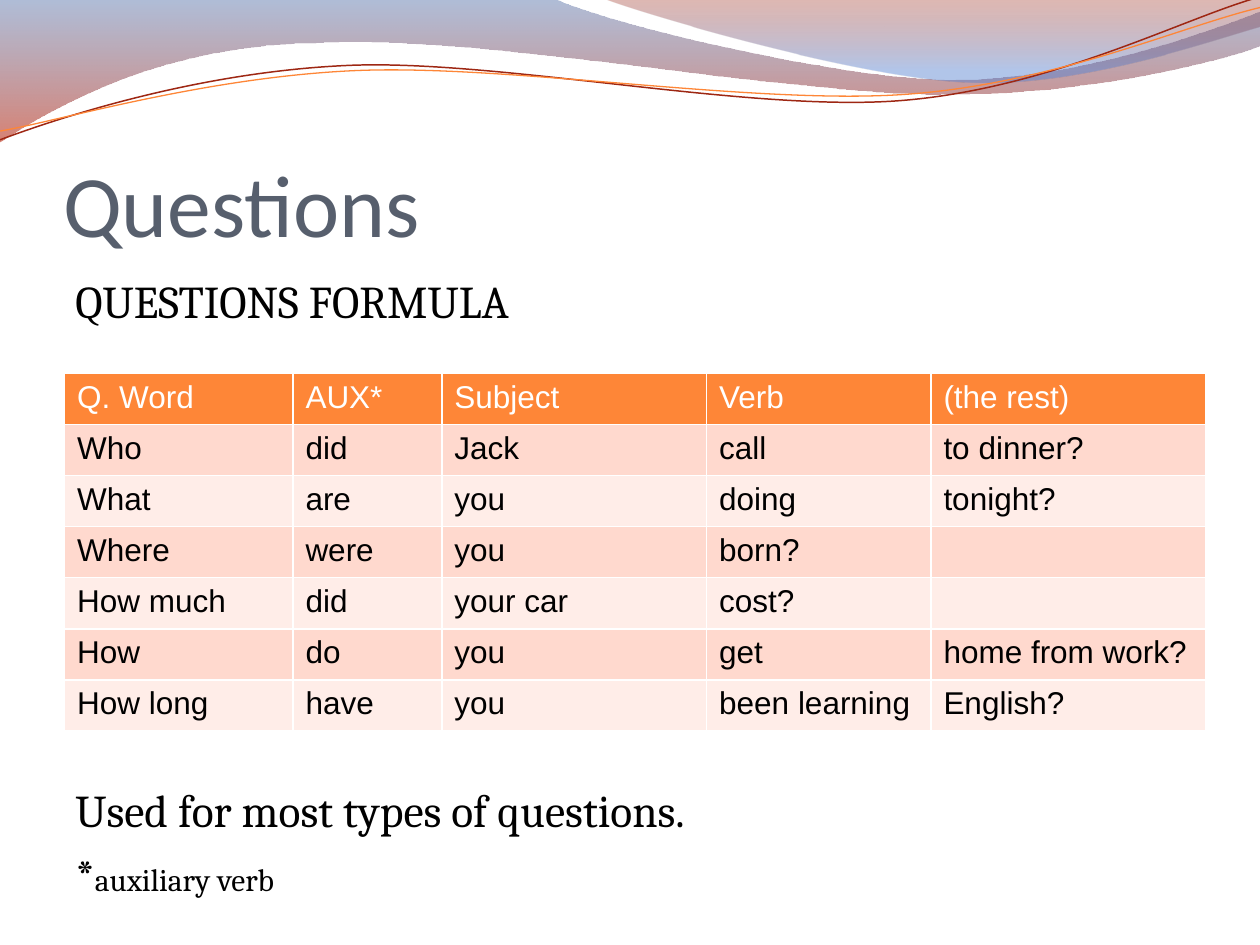
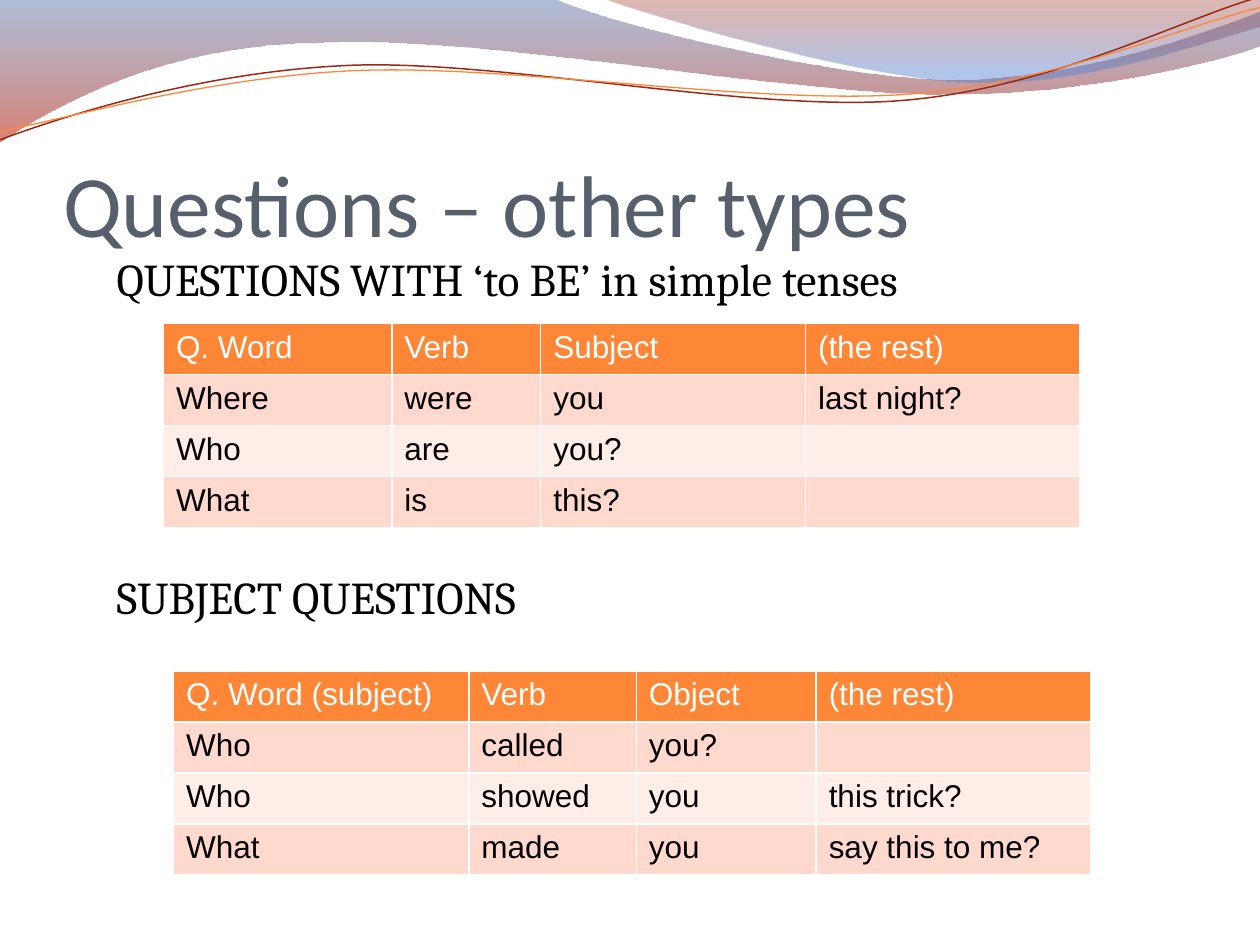
from lxml import etree
from pptx import Presentation
from pptx.dml.color import RGBColor
from pptx.enum import text as t
from pptx.oxml import ns
from pptx.util import Pt

ORANGE, DARK_RED, SLATE = "FE8637", "9E2713", "575F6D"
BLACK, WHITE = "000000", "FFFFFF"
BANDS = "FFD9CE", "FFEDE8"
ROW_HEIGHT = 29.2
WORD, AUXILIARY, SUBJECT, VERB, REST = 130.5, 85.1, 151.3, 128.2, 156.9  # column widths

# Header outlines in points: a start, then line ends (2 numbers) or Bézier curves (6)
BROAD_WAVE = [(0, -0.7), (316.8, -0.7),
              (342.7, 12.2, 478.1, 45.4, 545.8, 45.4),
              (614.2, 45.4, 689.8, 18.7, 720, 6.5), (720.7, 25.9),
              (707.8, 31.7, 626.4, 54.7, 537.1, 54),
              (447.8, 54, 275, 20.2, 185, 24.5),
              (92.9, 25.2, 33.1, 59.8, -0.7, 81.4)]
RIGHT_WAVE = [(344.9, -0.7), (366.5, 7.9, 491, 44.6, 553.7, 46.8),
              (616.3, 49.7, 691.9, 23, 720, 15.1), (720, 0)]
RED_STRAND = [(0, 79.9), (34.6, 67, 113.8, 41, 199.4, 37.4),
              (284.4, 33.8, 427, 64.1, 513.4, 57.6),
              (599.8, 51.1, 675.4, 10.8, 718.6, -1.4)]
ORANGE_STRAND = [(0, 74.9), (33.8, 69.1, 118.1, 43.9, 203.8, 40.3),
                 (290.2, 36.7, 429.8, 59.8, 516.2, 54),
                 (601.9, 48.2, 674.6, 15.1, 720, 4.3)]


def rgb(value):
    return RGBColor.from_string(value)


def write(paragraph, content, size=26, font="Cambria", color=BLACK):
    run = paragraph.add_run()
    run.text = content
    run.font.size, run.font.name, run.font.bold = Pt(size), font, False
    run.font.color.rgb = rgb(color)


def bend(shape, segments):
    """Join the three line ends of each curved segment into one Bézier curve."""
    lines = iter(list(shape._element.iter(ns.qn("a:lnTo"))))
    for segment in segments:
        first = next(lines)
        if len(segment) == 6:
            curve = etree.Element(ns.qn("a:cubicBezTo"))
            first.addprevious(curve)
            for line in (first, next(lines), next(lines)):
                curve.append(line[0])
                line.getparent().remove(line)


def set_border(cell, side):
    line = etree.SubElement(cell._tc.get_or_add_tcPr(), ns.qn(f"a:ln{side}"), w=str(Pt(1)))
    fill = etree.SubElement(line, ns.qn("a:solidFill"))
    etree.SubElement(fill, ns.qn("a:srgbClr"), val=WHITE)


class Deck:
    def __init__(self):
        self.file = Presentation()
        self.file.slide_width, self.file.slide_height = Pt(720), Pt(540)

    def new_slide(self, heading):
        self.slide = self.file.slides.add_slide(self.file.slide_layouts[5])
        self.header()
        self.title(heading)

    def header(self):
        self.wave(BROAD_WAVE, (0, "4F6EA8", 45), (100, "B61A00", 55))
        self.wave(RIGHT_WAVE, (0, "951500", 30), (80, "5681D1", 45))
        self.strand(RED_STRAND, DARK_RED, 0.85)
        self.strand(ORANGE_STRAND, ORANGE, 0.75)

    def outline(self, outline, close):
        (x, y), *segments = outline
        builder = self.slide.shapes.build_freeform(Pt(x), Pt(y))
        builder.add_line_segments(
            [(Pt(px), Pt(py)) for segment in segments
             for px, py in zip(segment[::2], segment[1::2])], close=close)
        shape = builder.convert_to_shape()
        bend(shape, segments)
        shape.shadow.inherit = False
        return shape

    def wave(self, outline, *stops):
        shape = self.outline(outline, close=True)
        shape.line.fill.background()
        shape.fill.gradient()
        shape.fill.gradient_angle = 270
        for stop, (position, color, opacity) in zip(shape.fill.gradient_stops, stops):
            stop.position = position / 100
            stop.color.rgb = rgb(color)
            etree.SubElement(stop._gs[0], ns.qn("a:alpha"), val=str(opacity * 1000))

    def strand(self, outline, color, width):
        shape = self.outline(outline, close=False)
        shape.fill.background()
        shape.line.color.rgb = rgb(color)
        shape.line.width = Pt(width)

    def title(self, heading):
        title = self.slide.shapes.title
        title.left, title.top, title.width, title.height = Pt(36), Pt(55.8), Pt(648), Pt(90)
        frame = title.text_frame
        frame.auto_size = t.MSO_AUTO_SIZE.NONE
        frame.vertical_anchor = t.MSO_ANCHOR.BOTTOM
        frame.margin_left = frame.margin_right = frame.margin_bottom = 0
        frame.margin_top = Pt(3.6)
        frame.paragraphs[0].alignment = t.PP_ALIGN.LEFT
        write(frame.paragraphs[0], heading, size=50, font="Calibri", color=SLATE)

    def body(self, left, top, width, height, first, second, gap):
        """Two lines of text with room for a table between them."""
        box = self.slide.shapes.add_textbox(Pt(left), Pt(top), Pt(width), Pt(height))
        frame = box.text_frame
        frame.word_wrap = True
        write(frame.paragraphs[0], first)
        below = frame.add_paragraph()
        below.space_before = Pt(gap)
        write(below, second)
        return frame

    def table(self, left, top, widths, rows):
        table = self.slide.shapes.add_table(
            len(rows), len(widths), Pt(left), Pt(top),
            Pt(sum(widths)), Pt(ROW_HEIGHT * len(rows))).table
        table.first_row = table.horz_banding = False
        for column, width in zip(table.columns, widths):
            column.width = Pt(width)
        for r, row in enumerate(rows):
            table.rows[r].height = Pt(ROW_HEIGHT)
            for c, content in enumerate(row):
                cell = table.cell(r, c)
                for side in "LRTB":
                    set_border(cell, side)
                cell.fill.solid()
                cell.fill.fore_color.rgb = rgb(BANDS[(r - 1) % 2] if r else ORANGE)
                if content:
                    write(cell.text_frame.paragraphs[0], content, size=18, font="Arial",
                          color=BLACK if r else WHITE)


def main():
    deck = Deck()

    # Questions formula
    deck.new_slide("Questions")
    usage = deck.body(36, 152.6, 648, 345.6, "QUESTIONS FORMULA",
                      "Used for most types of questions.", gap=259.8)
    footnote = usage.add_paragraph()
    footnote.space_before = Pt(5.2)
    write(footnote, "*")
    write(footnote, "auxiliary verb", size=18)
    deck.table(36.9, 213.3, [WORD, AUXILIARY, SUBJECT, VERB, REST], [
        ("Q. Word", "AUX*", "Subject", "Verb", "(the rest)"),
        ("Who", "did", "Jack", "call", "to dinner?"),
        ("What", "are", "you", "doing", "tonight?"),
        ("Where", "were", "you", "born?", ""),
        ("How much", "did", "your car", "cost?", ""),
        ("How", "do", "you", "get", "home from work?"),
        ("How long", "have", "you", "been learning", "English?"),
    ])

    # Questions with "to be" and subject questions
    deck.new_slide("Questions – other types")
    deck.body(59.6, 139.7, 612, 360, "QUESTIONS WITH ‘to BE’ in simple tenses",
              "SUBJECT QUESTIONS", gap=151)
    deck.table(93.4, 184.8, [WORD, AUXILIARY, SUBJECT, REST], [
        ("Q. Word", "Verb", "Subject", "(the rest)"),
        ("Where", "were", "you", "last night?"),
        ("Who", "are", "you?", ""),
        ("What", "is", "this?", ""),
    ])
    deck.table(99.2, 383.3, [168.7, 95.7, 102.8, REST], [
        ("Q. Word (subject)", "Verb", "Object", "(the rest)"),
        ("Who", "called", "you?", ""),
        ("Who", "showed", "you", "this trick?"),
        ("What", "made", "you", "say this to me?"),
    ])

    deck.file.save("out.pptx")


if __name__ == "__main__":
    main()
